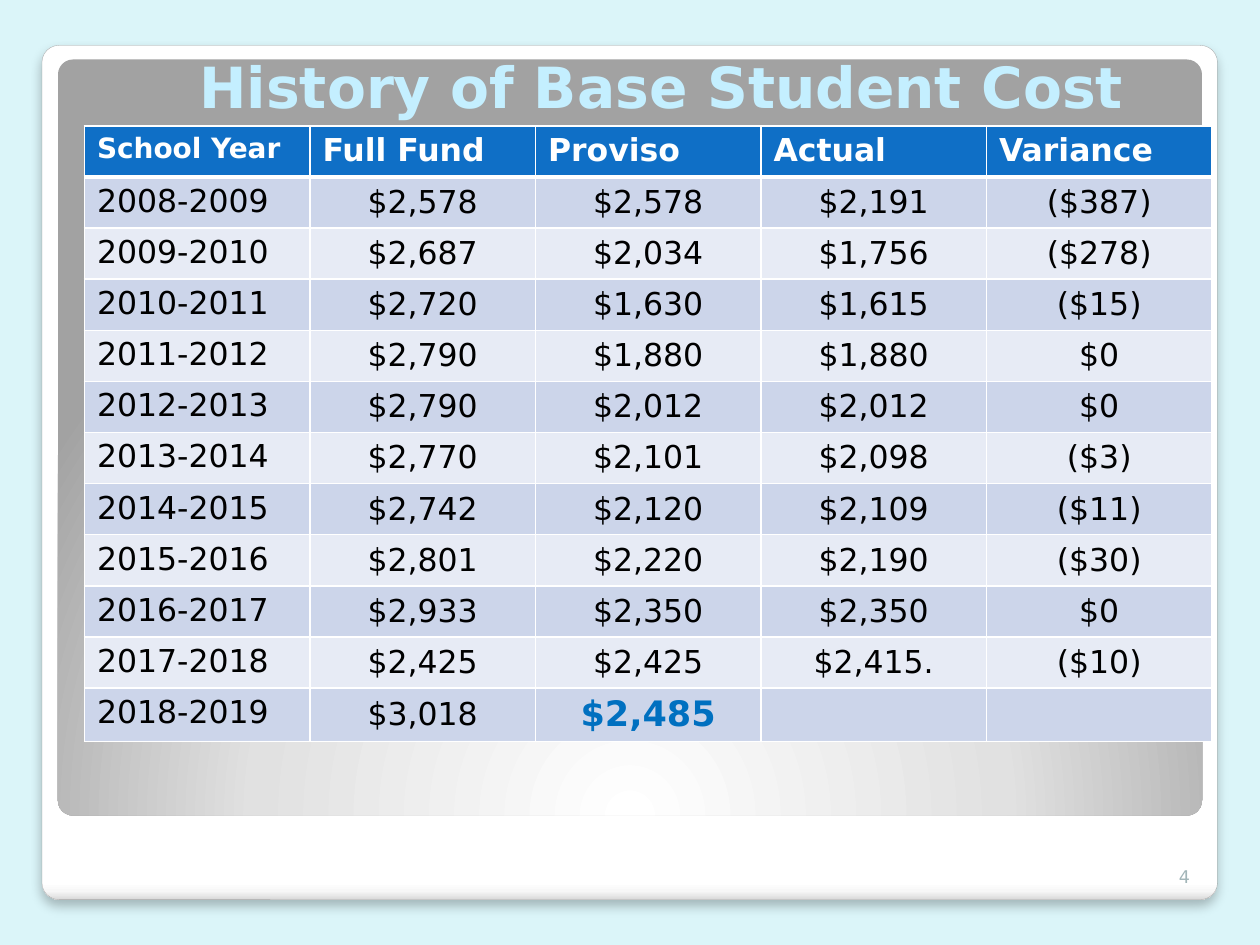
"""Build the base student cost history slide."""
from dataclasses import dataclass

from pptx import Presentation
from pptx.dml.color import RGBColor as Rgb
from pptx.enum.shapes import MSO_SHAPE as Shape
from pptx.enum.text import MSO_ANCHOR as Anchor, PP_ALIGN as Align
from pptx.oxml import parse_xml
from pptx.oxml.ns import nsdecls
from pptx.util import Inches, Pt

HEADINGS = ["School Year", "Full Fund", "Proviso", "Actual", "Variance"]
COSTS = [
    ["2008-2009", "$2,578", "$2,578", "$2,191", "($387)"],
    ["2009-2010", "$2,687", "$2,034", "$1,756", "($278)"],
    ["2010-2011", "$2,720", "$1,630", "$1,615", "($15)"],
    ["2011-2012", "$2,790", "$1,880", "$1,880", "$0"],
    ["2012-2013", "$2,790", "$2,012", "$2,012", "$0"],
    ["2013-2014", "$2,770", "$2,101", "$2,098", "($3)"],
    ["2014-2015", "$2,742", "$2,120", "$2,109", "($11)"],
    ["2015-2016", "$2,801", "$2,220", "$2,190", "($30)"],
    ["2016-2017", "$2,933", "$2,350", "$2,350", "$0"],
    ["2017-2018", "$2,425", "$2,425", "$2,415.", "($10)"],
    ["2018-2019", "$3,018", "$2,485", "", ""],
]
FRAME_STOPS = [(0, "FFFFFF"), (98, "FFFFFF"), (99, "F7F7F7"), (100, "DADADA")]
PANEL_STOPS = [(0, "FFFFFF"), (55, "E1E1E1"), (100, "A2A2A2")]
DOWNWARD = '<a:lin ang="5400000" scaled="0"/>'
FROM_BELOW = ('<a:path path="circle"><a:fillToRect l="50000" t="175000" '
              'r="50000" b="-75000"/></a:path>')
SOFT_SHADOW = ('<a:outerShdw {ns} blurRad="76200" dist="50800" dir="5400000" '
               'algn="tl" rotWithShape="0"><a:srgbClr val="000000">'
               '<a:alpha val="25000"/></a:srgbClr></a:outerShdw>')


@dataclass(frozen=True)
class Theme:
    """Colours, font and type sizes."""
    font: str = "DejaVu Sans"
    background: str = "DBF5F9"
    edge: str = "A4A4A4"
    title: str = "C4EFFF"
    white: str = "FFFFFF"
    text: str = "000000"
    header: str = "0F6FC6"
    bands: tuple = ("CCD5EA", "E7EBF5")
    accent: str = "0070C0"
    page: str = "A2B5B8"
    title_size: float = 32.4
    body_size: int = 18
    first_heading_size: int = 16
    accent_size: int = 20
    page_size: int = 10


class CostSlide:
    """Draws elements on one slide, with areas in percent of its size."""

    def __init__(self, deck, theme):
        self.deck, self.theme = deck, theme
        self.slide = deck.slides.add_slide(deck.slide_layouts[5])
        backdrop = self.slide.background.fill
        backdrop.solid()
        backdrop.fore_color.rgb = Rgb.from_string(theme.background)

    def area(self, left, top, width, height):
        """Turn percentages into slide lengths."""
        across, down = self.deck.slide_width / 100, self.deck.slide_height / 100
        return [round(v) for v in (left * across, top * down, width * across, height * down)]

    def style(self, paragraph, size, color, bold=False, align=Align.CENTER):
        """Set the look of a paragraph."""
        paragraph.alignment = align
        font = paragraph.font
        font.name, font.size, font.bold = self.theme.font, Pt(size), bold
        font.color.rgb = Rgb.from_string(color)

    def panel(self, area, stops, direction, edge=None, shadow=None):
        """Add a rounded panel with a gradient."""
        panel = self.slide.shapes.add_shape(Shape.ROUNDED_RECTANGLE, *self.area(*area))
        panel.adjustments[0] = 0.02
        marks = "".join(f'<a:gs pos="{pos * 1000}"><a:srgbClr val="{color}"/></a:gs>'
                        for pos, color in stops)
        panel.fill.background()
        properties = panel.fill._xPr
        properties.replace(properties[-1], parse_xml(
            f'<a:gradFill {nsdecls("a")} rotWithShape="1"><a:gsLst>{marks}</a:gsLst>'
            f'{direction}</a:gradFill>'))
        if edge:
            panel.line.color.rgb = Rgb.from_string(edge)
            panel.line.width = Pt(0.16)
        else:
            panel.line.fill.background()
        panel.shadow.inherit = False
        if shadow:
            properties[-1].append(parse_xml(shadow.format(ns=nsdecls("a"))))

    def title(self, area, text):
        """Place the title above the panels."""
        title = self.slide.shapes.title
        self.slide.shapes._spTree.append(title._element)
        title.left, title.top, title.width, title.height = self.area(*area)
        title.text_frame.text = text
        title.text_frame.vertical_anchor = Anchor.BOTTOM
        self.style(title.text_frame.paragraphs[0], self.theme.title_size,
                   self.theme.title, bold=True)

    def cell(self, cell, text, fill, top=1, bottom=1, middle=False, **look):
        """Fill, border and write one table cell."""
        properties = cell._tc.get_or_add_tcPr()
        for side, points in (("L", 1), ("R", 1), ("T", top), ("B", bottom)):
            properties.append(parse_xml(
                f'<a:ln{side} {nsdecls("a")} w="{Pt(points)}"><a:solidFill>'
                f'<a:srgbClr val="{self.theme.white}"/></a:solidFill></a:ln{side}>'))
        cell.fill.solid()
        cell.fill.fore_color.rgb = Rgb.from_string(fill)
        cell.vertical_anchor = Anchor.MIDDLE if middle else Anchor.TOP
        cell.text = text
        self.style(cell.text_frame.paragraphs[0], **look)

    def table(self, area, headings, records, accent):
        """Add the banded table, with one value picked out."""
        theme = self.theme
        table = self.slide.shapes.add_table(
            len(records) + 1, len(headings), *self.area(*area)).table
        for col, heading in enumerate(headings):
            self.cell(table.cell(0, col), heading, theme.header, bottom=3,
                      size=theme.body_size if col else theme.first_heading_size,
                      color=theme.white, bold=True, align=Align.LEFT)
        for row, record in enumerate(records):
            for col, value in enumerate(record):
                strong = (row, col) == accent
                self.cell(table.cell(row + 1, col), value, theme.bands[row % 2],
                          top=1 if row else 3, middle=col > 0,
                          size=theme.accent_size if strong else theme.body_size,
                          color=theme.accent if strong else theme.text, bold=strong,
                          align=Align.CENTER if col else Align.LEFT)

    def page_number(self, area, number):
        """Add the page number."""
        frame = self.slide.shapes.add_textbox(*self.area(*area)).text_frame
        frame.word_wrap = True
        frame.vertical_anchor = Anchor.MIDDLE
        frame.text = number
        self.style(frame.paragraphs[0], self.theme.page_size, self.theme.page)


def main():
    """Build and save the slide."""
    deck = Presentation()
    deck.slide_width, deck.slide_height = Inches(10), Inches(7.5)
    theme = Theme()
    page = CostSlide(deck, theme)
    page.panel((3.33, 4.8, 93.3, 90.4), FRAME_STOPS, DOWNWARD, theme.edge, SOFT_SHADOW)
    page.panel((4.6, 6.3, 90.8, 80), PANEL_STOPS, FROM_BELOW)
    page.title((10, 4.67, 85, 8.67), "History of Base Student Cost")
    page.table((6.7, 13.33, 89.5, 64.9), HEADINGS, COSTS, accent=(len(COSTS) - 1, 2))
    page.page_number((90.8, 87.7, 6.4, 10), "4")
    deck.save("out.pptx")


if __name__ == "__main__":
    main()
